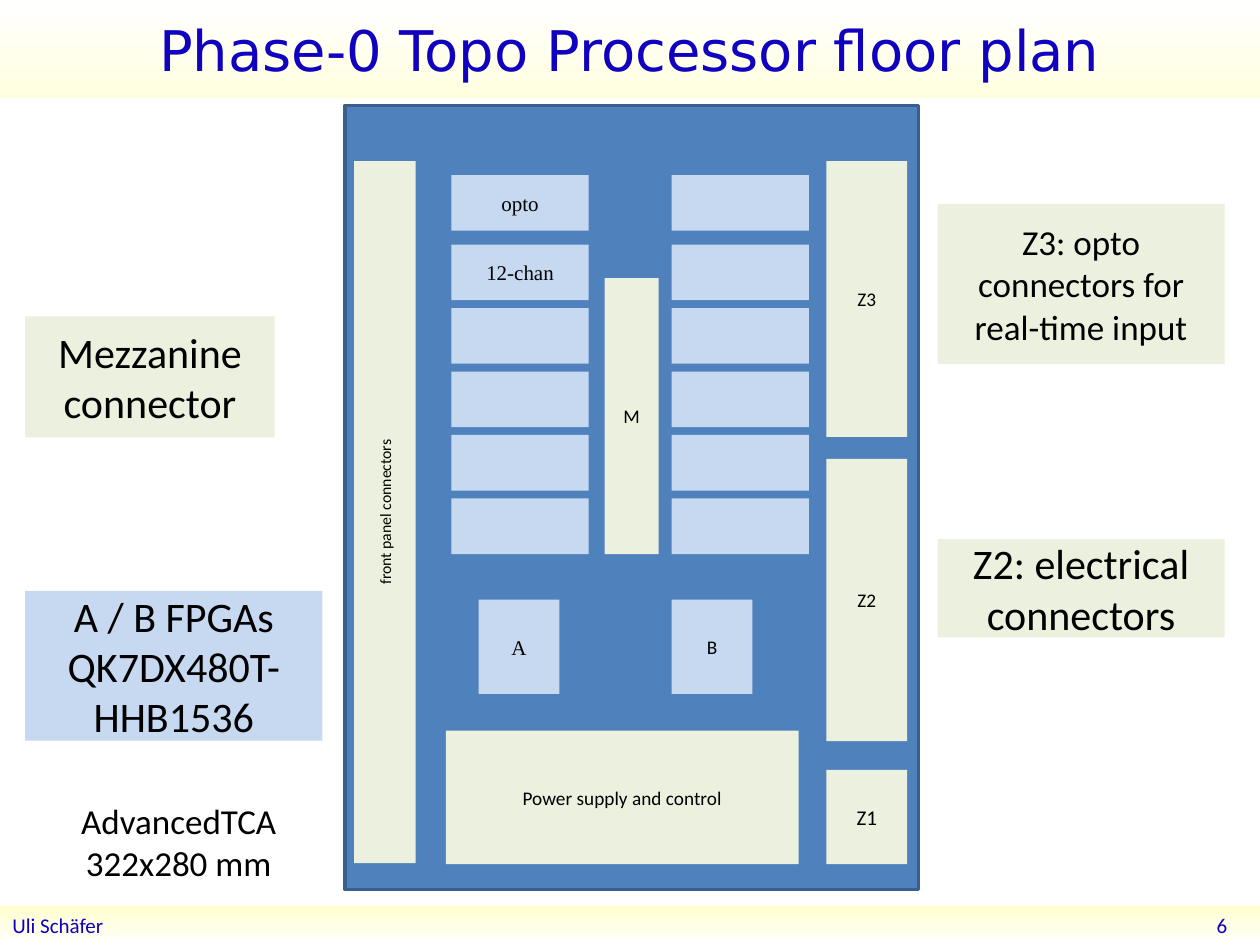
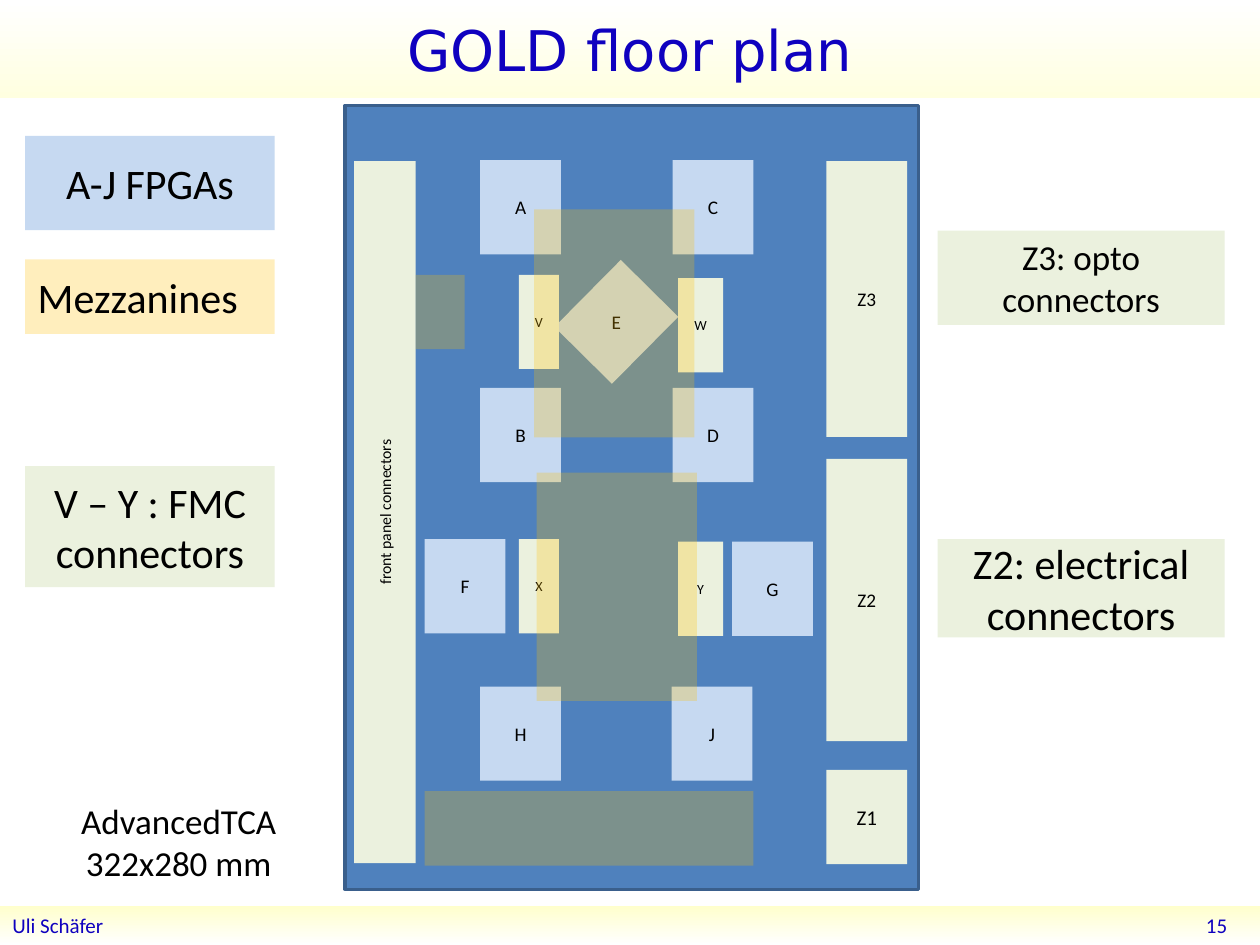
"""Builds two floor plan slides of a processor board."""
from dataclasses import dataclass

from lxml.etree import SubElement
from pptx import Presentation
from pptx.dml.color import RGBColor
from pptx.enum.shapes import MSO_SHAPE as Shape
from pptx.enum.text import MSO_ANCHOR as Anchor, PP_ALIGN as Align
from pptx.oxml.ns import qn
from pptx.util import Cm, Pt


@dataclass(frozen=True)
class Theme:
    ink: str = "000000"
    heading: str = "0F01BF"
    white: str = "FFFFFF"
    title_band: str = "FFFFE0"
    footer_band: str = "FFFFCC"
    board: str = "4F81BD"
    board_edge: str = "3A5F8C"
    chip: str = "C6D9F1"
    connector: str = "EBF1DE"
    mezzanine: str = "FFC000"
    mezzanine_alpha: int = 26
    sans: str = "Calibri"
    serif: str = "Times New Roman"
    title_font: str = "DejaVu Sans"
    title_size: int = 32
    note_size: int = 24
    small_note_size: int = 20
    footer_size: int = 12
    large_label: int = 12
    label: int = 11
    panel_label: int = 9
    tiny_label: int = 8


class FloorPlan:
    chip_width, chip_height = 1.63, 1.9
    left_notes, right_notes = 0.51, 18.9
    left_note_width, right_note_width = 5.03, 5.79

    def __init__(self, presentation, theme):
        self.presentation = presentation
        self.theme = theme
        self.slide = None

    def start(self, title, number):
        theme = self.theme
        self.slide = self.presentation.slides.add_slide(self.presentation.slide_layouts[6])
        band = self.band(0, 1.98, theme.white, theme.title_band)
        self.label(band, title, theme.title_size, font=theme.title_font, color=theme.heading)
        band = self.band(18.26, 0.79, theme.footer_band, theme.white)
        self.label(band, "Uli Schäfer", theme.footer_size, color=theme.heading, align=Align.LEFT)
        self.text(19.63, 18.24, 5.36, 0.81, number, theme.footer_size,
                  color=theme.heading, align=Align.RIGHT)

    def label(self, shape, text, size, font=None, color=None, align=Align.CENTER):
        frame = shape.text_frame
        frame.word_wrap = True
        frame.vertical_anchor = Anchor.MIDDLE
        paragraph = frame.paragraphs[0]
        paragraph.alignment = align
        for index, line in enumerate(text.split("\n")):
            if index:
                paragraph.add_line_break()
            run = paragraph.add_run()
            run.text = line
            run.font.size = Pt(size)
            run.font.name = font or self.theme.sans
            run.font.color.rgb = RGBColor.from_string(color or self.theme.ink)

    def text(self, left, top, width, height, text, size, **style):
        shape = self.slide.shapes.add_textbox(Cm(left), Cm(top), Cm(width), Cm(height))
        self.label(shape, text, size, **style)

    def rectangle(self, left, top, width, height):
        shape = self.slide.shapes.add_shape(
            Shape.RECTANGLE, Cm(left), Cm(top), Cm(width), Cm(height))
        shape.shadow.inherit = False
        shape.line.fill.background()
        return shape

    def band(self, top, height, upper, lower):
        shape = self.rectangle(0, top, 25.4, height)
        shape.fill.gradient()
        shape.fill.gradient_angle = 270
        for stop, color in zip(shape.fill.gradient_stops, (upper, lower)):
            stop.color.rgb = RGBColor.from_string(color)
        return shape

    def block(self, left, top, width, height, fill, text="", size=None, **style):
        shape = self.rectangle(left, top, width, height)
        shape.fill.solid()
        shape.fill.fore_color.rgb = RGBColor.from_string(fill)
        if text:
            self.label(shape, text, size or self.theme.label, **style)
        return shape

    def chip(self, left, top, text="", **style):
        return self.block(left, top, self.chip_width, self.chip_height,
                          self.theme.chip, text, **style)

    def connector(self, left, top, width, height, text, size=None):
        return self.block(left, top, width, height, self.theme.connector, text, size)

    def mezzanine(self, left, top, width, height, text="", size=None, **style):
        shape = self.block(left, top, width, height, self.theme.mezzanine, text, size, **style)
        color = shape.element.spPr.find(qn("a:solidFill"))[0]
        SubElement(color, qn("a:alpha")).set("val", str(self.theme.mezzanine_alpha * 1000))

    def left_note(self, top, height, fill, text, width=left_note_width):
        self.block(self.left_notes, top, width, height, fill, text, self.theme.note_size)

    def right_note(self, top, height, text, size):
        self.connector(self.right_notes, top, self.right_note_width, height, text, size)

    def board(self):
        theme = self.theme
        board = self.block(6.96, 2.13, 11.56, 15.8, theme.board)
        board.line.color.rgb = RGBColor.from_string(theme.board_edge)
        board.line.width = Pt(2)
        for text, top, height, size in (("Z1", 15.52, 1.9, theme.large_label),
                                        ("Z2", 9.25, 5.69, theme.label),
                                        ("Z3", 3.25, 5.56, theme.label)):
            self.connector(16.66, top, self.chip_width, height, text, size)
        panel = self.connector(7.14, 3.25, 1.24, 14.15, "front panel connectors",
                               theme.panel_label)
        panel.element.txBody.find(qn("a:bodyPr")).set("vert", "vert270")
        self.right_note(10.87, 1.98, "Z2: electrical connectors", theme.note_size)
        self.text(0.71, 15.98, 5.79, 1.96, "AdvancedTCA\n322x280 mm", theme.small_note_size)


def build_topo_processor(plan):
    theme = plan.theme
    plan.start("Phase-0 Topo Processor floor plan", "6")
    plan.board()
    plan.chip(9.65, 12.09, "A", size=theme.large_label, font=theme.serif)
    plan.chip(13.54, 12.09, "B")
    plan.left_note(6.38, 2.44, theme.connector, "Mezzanine connector")
    plan.left_note(11.91, 3.02, theme.chip, "A / B FPGAs QK7DX480T-HHB1536", width=5.99)
    plan.right_note(4.11, 3.23, "Z3: opto connectors for real-time input", theme.small_note_size)

    opto_tops = [3.53] + [4.93 + 1.28 * row for row in range(5)]
    opto_labels = ["opto", "12-chan", "", "", "", ""]
    for top, text in zip(opto_tops, opto_labels):
        plan.block(9.1, top, 2.77, 1.12, theme.chip, text, theme.large_label, font=theme.serif)
        plan.block(13.54, top, 2.77, 1.12, theme.chip)
    plan.connector(12.19, 5.61, 1.09, 5.56, "M")
    plan.connector(8.99, 14.73, 7.11, 2.69, "Power supply and control")


def build_gold(plan):
    theme = plan.theme
    plan.start("GOLD floor plan", "15")
    plan.board()
    for text, left, top in (("A", 9.68, 3.23), ("C", 13.56, 3.23),
                            ("B", 9.68, 7.82), ("D", 13.56, 7.82),
                            ("F", 8.56, 10.87), ("G", 14.76, 10.92),
                            ("H", 9.68, 13.84), ("J", 13.54, 13.84)):
        plan.chip(left, top, text)
    plan.chip(11.61, 5.54).rotation = 44.7
    plan.text(11.61, 5.54, plan.chip_width, plan.chip_height, "E", theme.label)
    for text, left, top, width in (("V", 10.46, 5.54, 0.81), ("W", 13.67, 5.61, 0.91),
                                   ("X", 10.46, 10.87, 0.81), ("Y", 13.67, 10.92, 0.91)):
        plan.connector(left, top, width, plan.chip_height, text, theme.tiny_label)

    plan.left_note(2.74, 1.9, theme.chip, "A-J FPGAs")
    plan.mezzanine(plan.left_notes, 5.23, plan.left_note_width, 1.5, "Mezzanines",
                   theme.note_size, align=Align.LEFT)
    plan.left_note(9.4, 2.44, theme.connector, "V – Y : FMC connectors")
    plan.right_note(4.65, 1.9, "Z3: opto connectors", theme.small_note_size)
    for area in ((8.38, 5.54, 0.99, 1.5), (10.77, 4.22, 3.23, 4.6),
                 (10.82, 9.53, 3.23, 4.6), (8.56, 15.95, 6.63, 1.5)):
        plan.mezzanine(*area)


def main():
    presentation = Presentation()
    presentation.slide_width, presentation.slide_height = Cm(25.4), Cm(19.05)
    plan = FloorPlan(presentation, Theme())
    build_topo_processor(plan)
    build_gold(plan)
    presentation.save("out.pptx")


if __name__ == "__main__":
    main()
